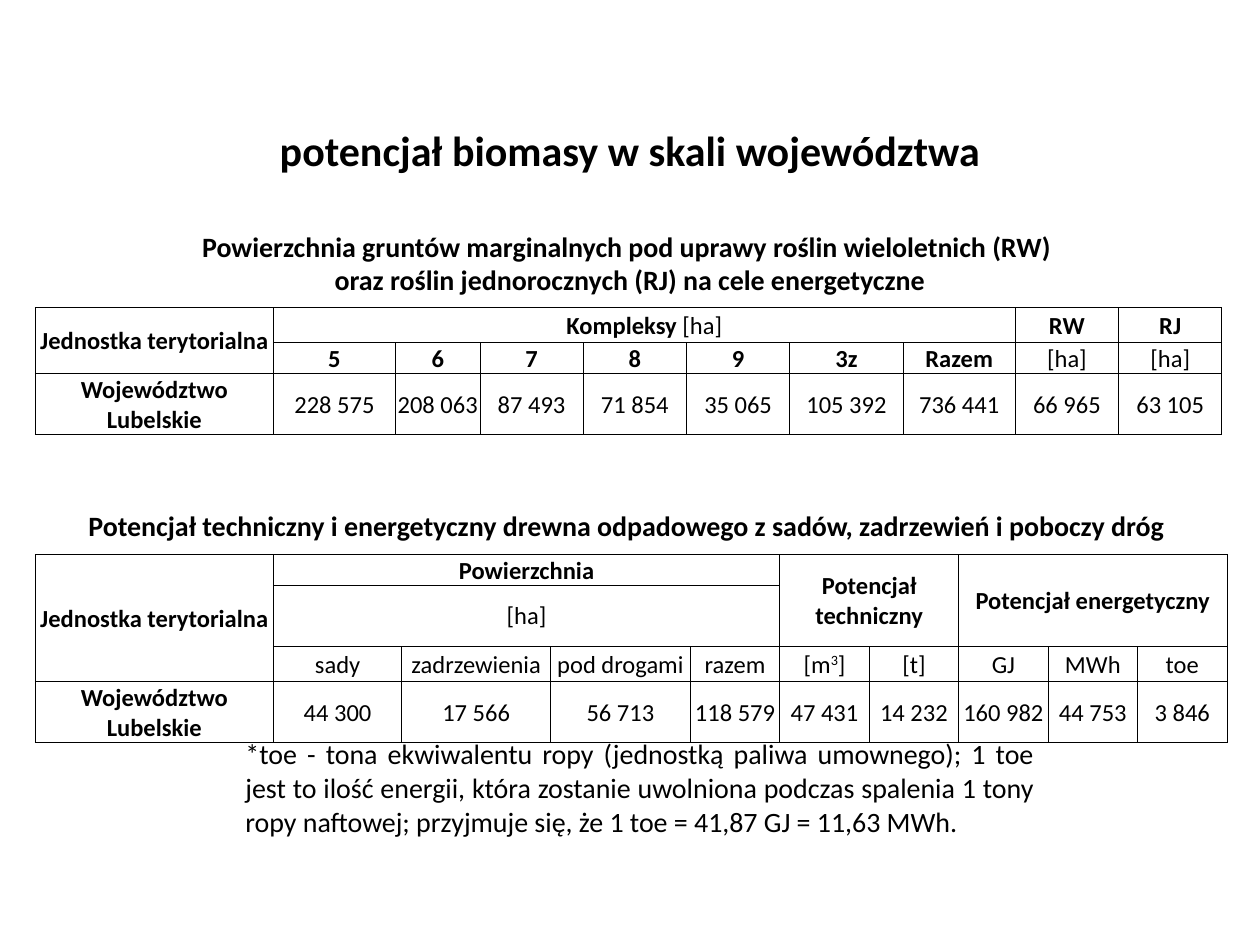
"""Build the slide on biomass potential at the scale of the province."""
from lxml.etree import SubElement
from pptx import Presentation
from pptx.dml.color import RGBColor
from pptx.enum.text import MSO_ANCHOR as Anchor, PP_ALIGN as Align
from pptx.oxml.ns import qn
from pptx.util import Inches, Pt

BLACK = RGBColor(0x00, 0x00, 0x00)
FONT = "Calibri"
BOLD_LABELS = {
    "Jednostka terytorialna", "Województwo Lubelskie", "Kompleksy", "RW", "RJ",
    "5", "6", "7", "8", "9", "3z", "Razem",
    "Powierzchnia", "Potencjał techniczny", "Potencjał energetyczny",
}


def format_run(run, size, bold):
    run.font.name = FONT
    run.font.size = Pt(size)
    run.font.bold = bold
    run.font.color.rgb = BLACK


def add_border(cell):
    properties = cell._tc.get_or_add_tcPr()
    for side in ("a:lnL", "a:lnR", "a:lnT", "a:lnB"):
        line = SubElement(properties, qn(side), w=str(Pt(0.5)))
        fill = SubElement(line, qn("a:solidFill"))
        SubElement(fill, qn("a:srgbClr"), val=str(BLACK))


presentation = Presentation()
presentation.slide_width = Inches(10)
presentation.slide_height = Inches(7.5)
slide = presentation.slides.add_slide(presentation.slide_layouts[6])

land_table = {
    "top": 2.44,
    "height": 0.99,
    "columns": [1.89, 0.97, 0.67, 0.82, 0.82, 0.82, 0.9, 0.89, 0.82, 0.82],
    "rows": [0.28, 0.15, 0.15],
    "merges": [(0, 0, 1, 0), (0, 1, 0, 7)],
    "cells": [
        ["Jednostka terytorialna", "Kompleksy |[ha]", "", "", "", "", "", "", "RW", "RJ"],
        ["", "5", "6", "7", "8", "9", "3z", "Razem", "[ha]", "[ha]"],
        ["Województwo Lubelskie", "228 575", "208 063", "87 493", "71 854",
         "35 065", "105 392", "736 441", "66 965", "63 105"],
    ],
}
wood_table = {
    "top": 4.4,
    "height": 1.24,
    "columns": [1.89, 1.02, 1.18, 1.11] + [0.71] * 6,
    "rows": [0.16, 0.16, 0.28, 0.16],
    "merges": [(0, 0, 2, 0), (0, 1, 0, 4), (0, 5, 1, 6), (0, 7, 1, 9), (1, 1, 1, 4)],
    "cells": [
        ["Jednostka terytorialna", "Powierzchnia", "", "", "",
         "Potencjał techniczny", "", "Potencjał energetyczny", "", ""],
        ["", "[ha]", "", "", "", "", "", "", "", ""],
        ["", "sady", "zadrzewienia", "pod drogami", "razem",
         "[m|3|]", "[t]", "GJ", "MWh", "toe"],
        ["Województwo Lubelskie", "44 300", "17 566", "56 713", "118 579",
         "47 431", "14 232", "160 982", "44 753", "3 846"],
    ],
}

for data in (land_table, wood_table):
    shape = slide.shapes.add_table(
        len(data["rows"]), len(data["columns"]),
        Inches(0.28), Inches(data["top"]), Inches(9.45), Inches(data["height"]),
    )
    table = shape.table
    table.first_row = False
    table.horz_banding = False
    for column, width in zip(table.columns, data["columns"]):
        column.width = Inches(width)
    for row, height in zip(table.rows, data["rows"]):
        row.height = Inches(height)
    shape.height = Inches(data["height"])
    for top, left, bottom, right in data["merges"]:
        table.cell(top, left).merge(table.cell(bottom, right))

    for row, labels in zip(table.rows, data["cells"]):
        for cell, label in zip(row.cells, labels):
            add_border(cell)
            cell.fill.background()
            cell.vertical_anchor = Anchor.MIDDLE
            cell.margin_left = cell.margin_right = cell.margin_top = Inches(0.01)
            cell.margin_bottom = 0
            paragraph = cell.text_frame.paragraphs[0]
            paragraph.alignment = Align.CENTER
            paragraph.font.size = Pt(14)
            for part in label.split("|") if label else []:
                run = paragraph.add_run()
                run.text = part
                format_run(run, 14, part.strip() in BOLD_LABELS)
                if part == "3":
                    run.font._element.set("baseline", "30000")

texts = [
    ("potencjał biomasy w skali województwa",
     (0, 0.83, 10, 0.71), 24, True, Align.CENTER, Anchor.MIDDLE),
    ("Powierzchnia gruntów marginalnych pod uprawy roślin wieloletnich (RW) \n"
     "oraz roślin jednorocznych (RJ) na cele energetyczne",
     (0.51, 1.77, 8.98, 0.64), 16, True, Align.CENTER, Anchor.TOP),
    ("Potencjał techniczny i energetyczny drewna odpadowego z sadów, "
     "zadrzewień i poboczy dróg ",
     (0, 3.99, 10, 0.64), 16, True, Align.CENTER, Anchor.TOP),
    ("*toe - tona ekwiwalentu ropy (jednostką paliwa umownego); 1 toe jest to "
     "ilość energii, która zostanie uwolniona podczas spalenia 1 tony ropy "
     "naftowej; przyjmuje się, że 1 toe = 41,87 GJ = 11,63 MWh.",
     (1.85, 5.8, 6.46, 0.91), 16, False, Align.JUSTIFY, Anchor.TOP),
]
for text, box, size, bold, alignment, anchor in texts:
    text_frame = slide.shapes.add_textbox(*map(Inches, box)).text_frame
    text_frame.word_wrap = True
    text_frame.vertical_anchor = anchor
    paragraph = text_frame.paragraphs[0]
    paragraph.text = text
    paragraph.alignment = alignment
    for run in paragraph.runs:
        format_run(run, size, bold)

presentation.save("out.pptx")
